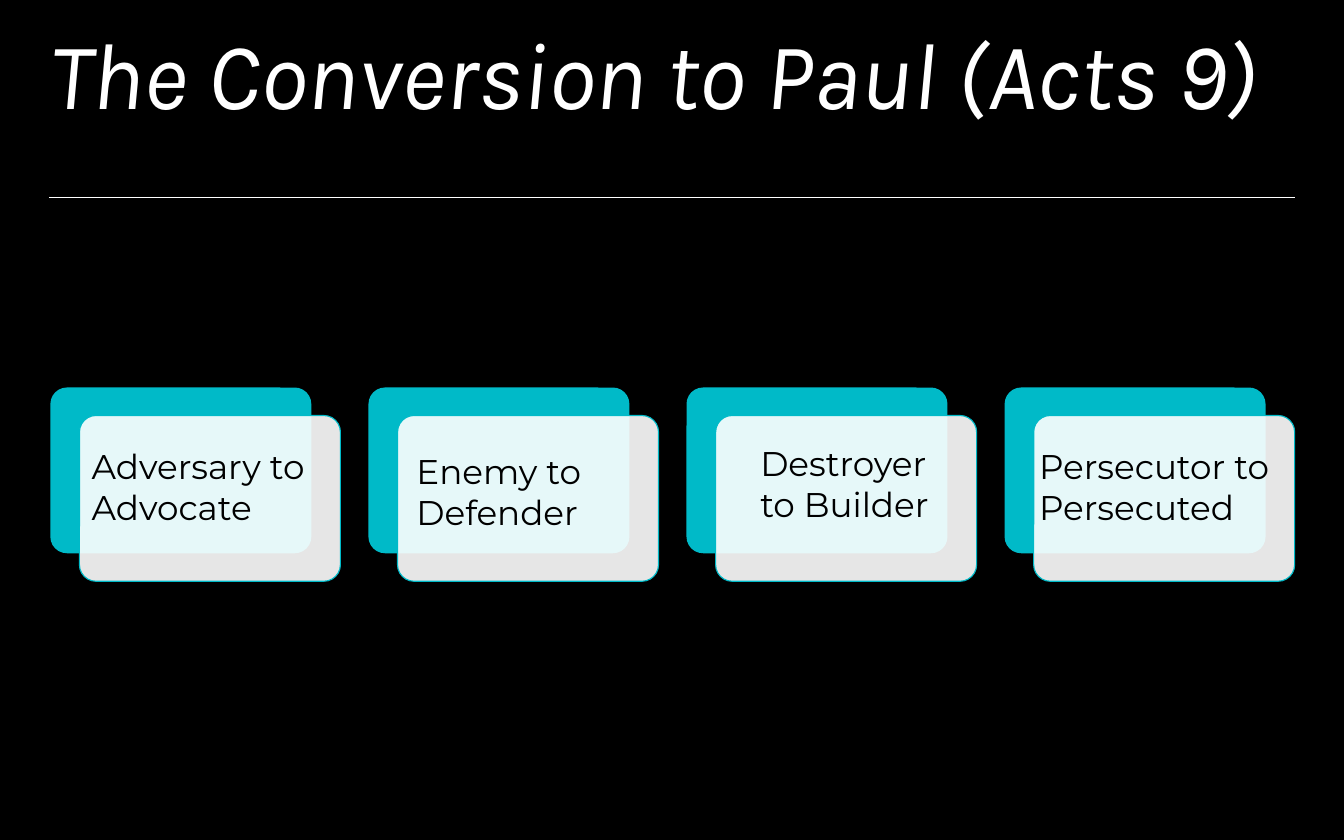
from dataclasses import dataclass

import lxml.etree
import pptx
import pptx.dml.color
import pptx.enum.shapes
import pptx.enum.text
import pptx.oxml.ns
import pptx.slide
import pptx.util
from pptx.util import Inches


@dataclass(frozen=True)
class Theme:
    background: str = "000000"
    light: str = "FFFFFF"
    accent: str = "00BAC8"
    text: str = "000000"
    title_font: str = "Karla"
    body_font: str = "Montserrat"
    title_size: float = 61
    body_size: float = 22


@dataclass(frozen=True)
class Change:
    """A card's label and its text box, in inches."""
    label: str
    left: float
    top: float
    width: float


THEME = Theme()
CHANGES = [
    Change("Adversary to Advocate", 0.72, 3.93, 2.45),
    Change("Enemy to Defender", 3.62, 3.97, 2.05),
    Change("Destroyer to Builder", 6.69, 3.90, 1.92),
    Change("Persecutor to Persecuted", 9.18, 3.93, 2.57),
]
MARGIN = 0.44
CONTENT_WIDTH = 11.12
CARD_LEFT, CARD_TOP = 0.45, 3.46
CARD_WIDTH, CARD_HEIGHT = 2.33, 1.48
CARD_PITCH = 2.84
PANEL_OFFSET_X, PANEL_OFFSET_Y = 0.26, 0.25
LABEL_HEIGHT = 0.84


def color(value: str) -> pptx.dml.color.RGBColor:
    return pptx.dml.color.RGBColor.from_string(value)


def add_title(slide: pptx.slide.Slide, text: str) -> None:
    title = slide.shapes.title
    title.left, title.top = Inches(MARGIN), Inches(0.25)
    title.width, title.height = Inches(CONTENT_WIDTH), Inches(1.08)
    frame = title.text_frame
    frame.text = text
    frame.word_wrap = True
    frame.auto_size = pptx.enum.text.MSO_AUTO_SIZE.NONE
    frame.vertical_anchor = pptx.enum.text.MSO_ANCHOR.TOP
    frame.margin_left = frame.margin_right = 0
    frame.margin_top = frame.margin_bottom = 0
    paragraph = frame.paragraphs[0]
    paragraph.alignment = pptx.enum.text.PP_ALIGN.LEFT
    paragraph.line_spacing = 0.9
    paragraph.font.name = THEME.title_font
    paragraph.font.size = pptx.util.Pt(THEME.title_size)
    paragraph.font.italic = True
    paragraph.font.color.rgb = color(THEME.light)


def add_rule(slide: pptx.slide.Slide, top: float) -> None:
    rule = slide.shapes.add_connector(
        pptx.enum.shapes.MSO_CONNECTOR.STRAIGHT,
        Inches(MARGIN), Inches(top), Inches(MARGIN + CONTENT_WIDTH), Inches(top))
    rule.line.color.rgb = color(THEME.light)
    rule.line.width = pptx.util.Pt(0.5)
    lxml.etree.SubElement(rule._element.spPr, pptx.oxml.ns.qn("a:effectLst"))


def add_panel(slide: pptx.slide.Slide, left: float, top: float, fill: str,
              opacity: int = 100, outline: str | None = None) -> None:
    panel = slide.shapes.add_shape(
        pptx.enum.shapes.MSO_SHAPE.ROUNDED_RECTANGLE,
        Inches(left), Inches(top), Inches(CARD_WIDTH), Inches(CARD_HEIGHT))
    panel.adjustments[0] = 0.1
    panel.shadow.inherit = False
    panel.fill.solid()
    panel.fill.fore_color.rgb = color(fill)
    if opacity < 100:
        fill_color = panel._element.spPr.find(".//" + pptx.oxml.ns.qn("a:srgbClr"))
        alpha = lxml.etree.SubElement(fill_color, pptx.oxml.ns.qn("a:alpha"))
        alpha.set("val", str(opacity * 1000))
    if outline:
        panel.line.color.rgb = color(outline)
        panel.line.width = pptx.util.Pt(0.75)
    else:
        panel.line.fill.background()


def add_label(slide: pptx.slide.Slide, change: Change) -> None:
    box = slide.shapes.add_textbox(
        Inches(change.left), Inches(change.top), Inches(change.width), Inches(LABEL_HEIGHT))
    frame = box.text_frame
    frame.text = change.label
    frame.word_wrap = True
    frame.auto_size = pptx.enum.text.MSO_AUTO_SIZE.SHAPE_TO_FIT_TEXT
    paragraph = frame.paragraphs[0]
    paragraph.font.name = THEME.body_font
    paragraph.font.size = pptx.util.Pt(THEME.body_size)
    paragraph.font.color.rgb = color(THEME.text)


def main() -> None:
    presentation = pptx.Presentation()
    presentation.slide_width, presentation.slide_height = Inches(12), Inches(7.5)
    slide = presentation.slides.add_slide(presentation.slide_layouts.get_by_name("Title Only"))
    slide.background.fill.solid()
    slide.background.fill.fore_color.rgb = color(THEME.background)

    # Heading
    add_title(slide, "The Conversion to Paul (Acts 9)")
    add_rule(slide, 1.76)

    # Cards: a solid panel behind a translucent one
    for index in range(len(CHANGES)):
        left = CARD_LEFT + index * CARD_PITCH
        add_panel(slide, left, CARD_TOP, THEME.accent)
        add_panel(slide, left + PANEL_OFFSET_X, CARD_TOP + PANEL_OFFSET_Y,
                  THEME.light, opacity=90, outline=THEME.accent)

    # Labels on top of the cards
    for change in CHANGES:
        add_label(slide, change)

    presentation.save("out.pptx")


if __name__ == "__main__":
    main()
